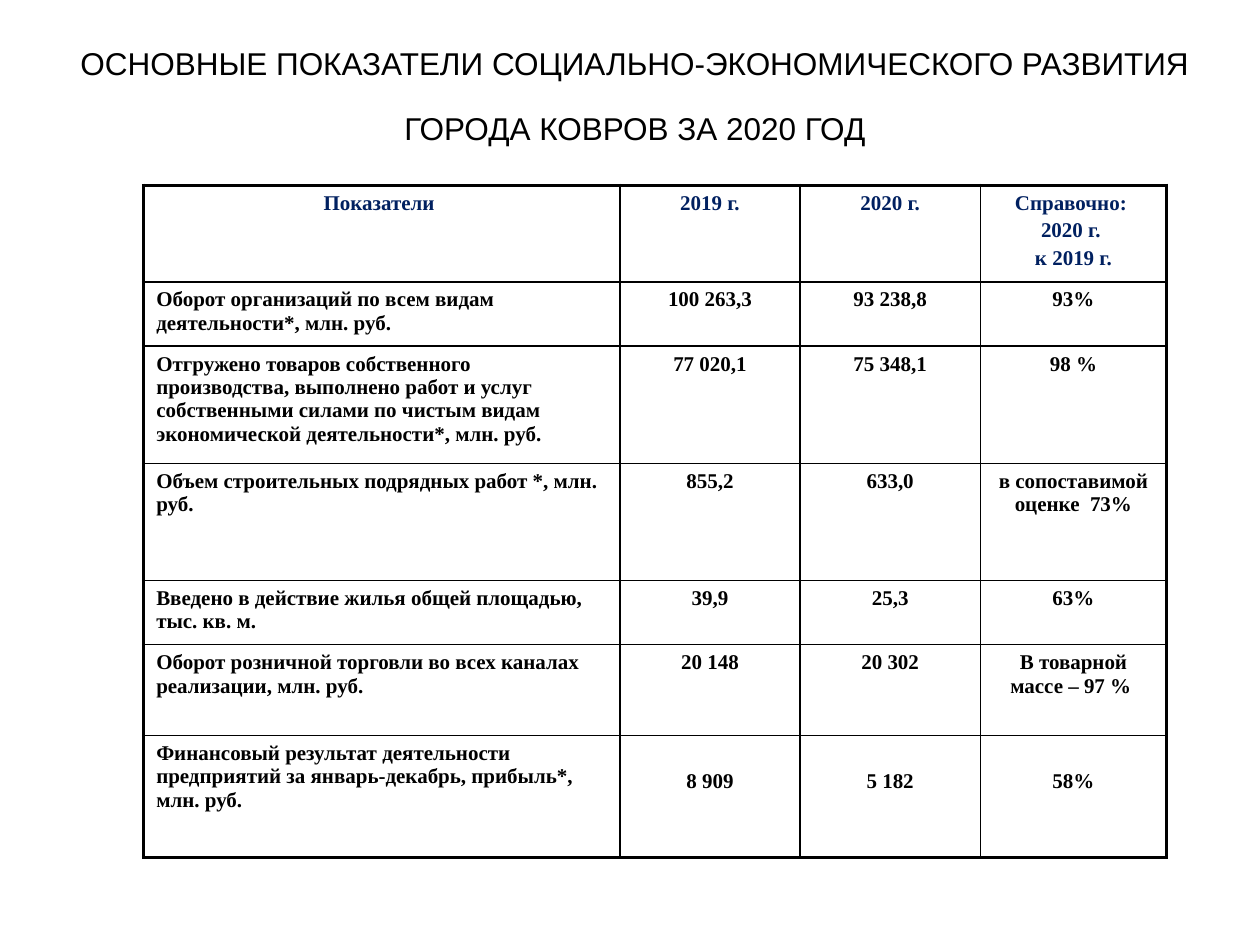
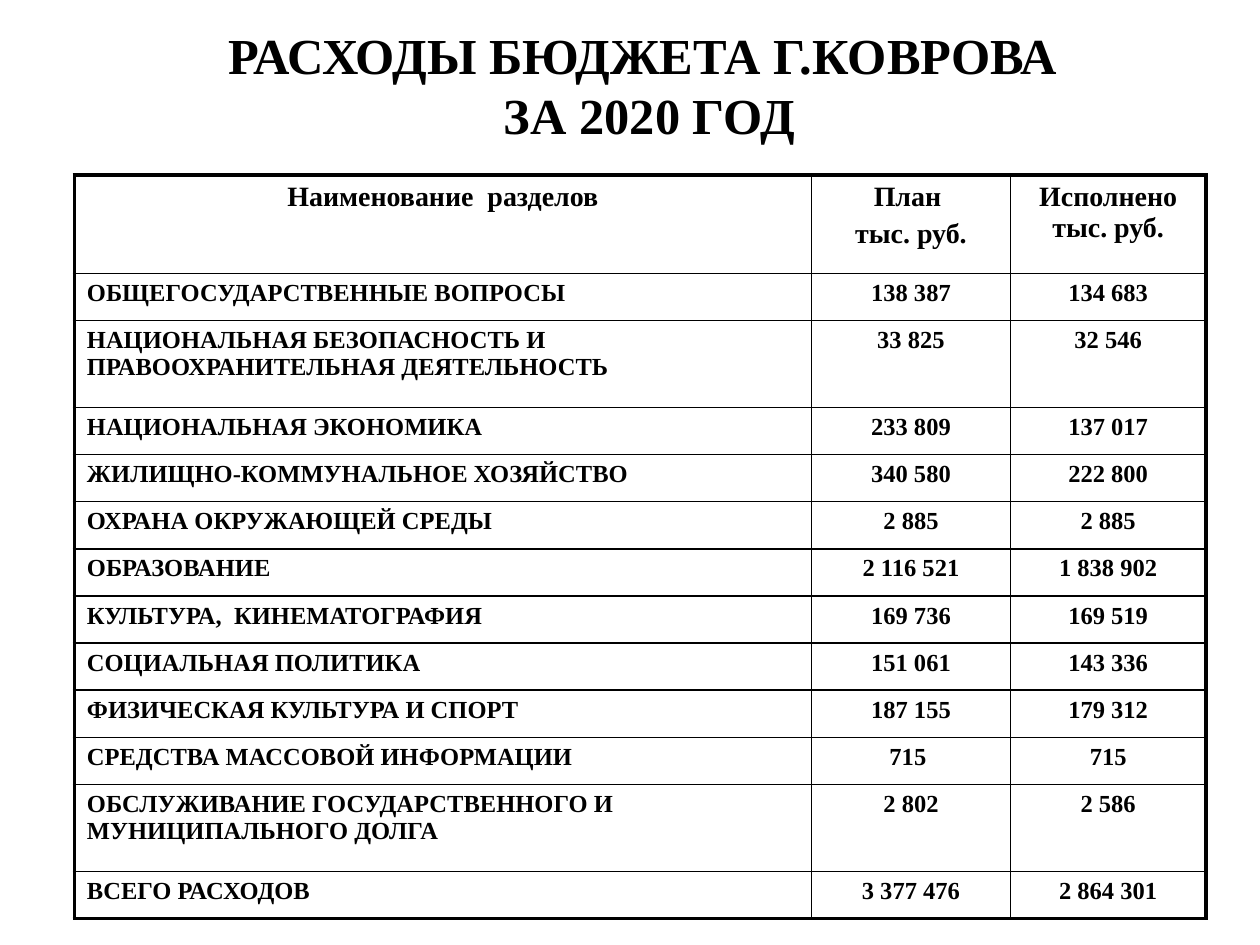
from lxml import etree
from pptx import Presentation
from pptx import util as u
from pptx.dml.color import RGBColor
from pptx.enum import text
from pptx.oxml import ns

BLACK = RGBColor(0x00, 0x00, 0x00)
NAVY = RGBColor(0x00, 0x20, 0x60)
SERIF = "Times New Roman"
SANS = "Arial"
WIDTH, HEIGHT = u.Inches(10), u.Inches(7.5)
FRAME, RULE = 2.25, 1

INDICATORS = [
    ["Показатели ", "2019 г.", "2020 г.", "Справочно: \n2020 г. \nк 2019 г."],
    ["Оборот организаций по всем видам деятельности*, млн. руб.",
     "100 263,3", "93 238,8", "93%"],
    ["Отгружено товаров собственного производства, выполнено работ и услуг "
     "собственными силами по чистым видам экономической деятельности*, млн. руб.",
     "77 020,1", "75 348,1", "98 %"],
    ["Объем строительных подрядных работ *, млн. руб.",
     "855,2", "633,0", "в сопоставимой оценке  73%"],
    ["Введено в действие жилья общей площадью, тыс. кв. м.",
     "39,9", "25,3", "63%"],
    ["Оборот розничной торговли во всех каналах реализации, млн. руб.",
     "20 148", "20 302", "В товарной массе – 97 % "],
    ["Финансовый результат деятельности предприятий за январь-декабрь, "
     "прибыль*, млн. руб.", "8 909", "5 182", "58%"],
]
EXPENSES = [
    ["Наименование  разделов", "План \nтыс. руб.", "Исполнено тыс. руб."],
    ["ОБЩЕГОСУДАРСТВЕННЫЕ ВОПРОСЫ", "138 387", "134 683"],
    ["НАЦИОНАЛЬНАЯ БЕЗОПАСНОСТЬ И ПРАВООХРАНИТЕЛЬНАЯ ДЕЯТЕЛЬНОСТЬ",
     "33 825", "32 546"],
    ["НАЦИОНАЛЬНАЯ ЭКОНОМИКА", "233 809", "137 017"],
    ["ЖИЛИЩНО-КОММУНАЛЬНОЕ ХОЗЯЙСТВО", "340 580", "222 800"],
    ["ОХРАНА ОКРУЖАЮЩЕЙ СРЕДЫ", "2 885", "2 885"],
    ["ОБРАЗОВАНИЕ", "2 116 521", "1 838 902"],
    ["КУЛЬТУРА,  КИНЕМАТОГРАФИЯ", "169 736", "169 519"],
    ["СОЦИАЛЬНАЯ ПОЛИТИКА", "151 061", "143 336"],
    ["ФИЗИЧЕСКАЯ КУЛЬТУРА И СПОРТ", "187 155", "179 312"],
    ["СРЕДСТВА МАССОВОЙ ИНФОРМАЦИИ", "715 ", "715"],
    ["ОБСЛУЖИВАНИЕ ГОСУДАРСТВЕННОГО И МУНИЦИПАЛЬНОГО ДОЛГА", "2 802", "2 586"],
    ["ВСЕГО РАСХОДОВ", "3 377 476", "2 864 301"],
]


def across(percent):
    """Turn a percentage of the slide's width into a length."""
    return round(WIDTH * percent / 100)


def down(percent):
    """Turn a percentage of the slide's height into a length."""
    return round(HEIGHT * percent / 100)


def write(frame, words, size, font, color=BLACK, bold=False, centred=True, gap=0):
    """Fill a text frame with one paragraph per line of words."""
    for index, line in enumerate(words.split("\n")):
        para = frame.add_paragraph() if index else frame.paragraphs[0]
        para.alignment = text.PP_ALIGN.CENTER if centred else text.PP_ALIGN.LEFT
        para.space_before = u.Pt(gap if index else 0)
        span = para.add_run()
        span.text = line
        span.font.size = u.Pt(size)
        span.font.name = font
        span.font.bold = bold
        span.font.color.rgb = color


def add_title(page, words, left, top, width, height, **style):
    """Add a centred title, placed in percentages of the slide."""
    box = page.shapes.add_textbox(across(left), down(top), across(width), down(height))
    frame = box.text_frame
    frame.word_wrap = True
    frame.vertical_anchor = text.MSO_ANCHOR.MIDDLE
    write(frame, words, **style)


def set_borders(cell, widths):
    """Draw the left, right, top and bottom borders of a cell in points."""
    properties = cell._tc.get_or_add_tcPr()
    for index, (side, width) in enumerate(zip("LRTB", widths)):
        line = etree.Element(ns.qn(f"a:ln{side}"), w=str(u.Pt(width)))
        fill = etree.SubElement(line, ns.qn("a:solidFill"))
        etree.SubElement(fill, ns.qn("a:srgbClr"), val=str(BLACK))
        properties.insert(index, line)


def add_grid(page, rows, left, top, widths, heights, head_size, size, head_color=BLACK):
    """Add a framed table with thin inner rules and return it."""
    last_row, last_column = len(rows) - 1, len(widths) - 1
    table = page.shapes.add_table(
        len(rows), len(widths), across(left), down(top),
        across(sum(widths)), down(sum(heights))).table
    table.first_row = table.horz_banding = False
    for column, width in zip(table.columns, widths):
        column.width = across(width)
    for r, (row, height) in enumerate(zip(rows, heights)):
        table.rows[r].height = down(height)
        for c, words in enumerate(row):
            cell = table.cell(r, c)
            cell.fill.background()
            outer = (c == 0, c == last_column, r == 0, r == last_row)
            set_borders(cell, [FRAME if edge else RULE for edge in outer])
            cell_size = size if r else head_size
            write(cell.text_frame, words, cell_size, SERIF,
                  color=BLACK if r else head_color, bold=True,
                  centred=r == 0 or c > 0, gap=cell_size * 0.2)
    return table


def add_indicators(page):
    """Build the slide of social and economic indicators."""
    add_title(page, "ОСНОВНЫЕ ПОКАЗАТЕЛИ СОЦИАЛЬНО-ЭКОНОМИЧЕСКОГО РАЗВИТИЯ \n"
              "ГОРОДА КОВРОВ ЗА 2020 ГОД ",
              5.1, 4, 91.3, 12.13, size=18, font=SANS, gap=15.5)
    table = add_grid(page, INDICATORS, 11.4, 19.6, [37.8, 14.3, 14.3, 14.8],
                     [9.87, 6.8, 12.4, 12.4, 6.8, 9.6, 12.9],
                     head_size=12, size=12, head_color=NAVY)
    for column in range(1, 4):
        table.cell(len(INDICATORS) - 1, column).margin_top = down(3.6)


def add_expenses(page):
    """Build the slide of budget expenses."""
    add_title(page, "РАСХОДЫ БЮДЖЕТА Г.КОВРОВА \nЗА 2020 ГОД",
              10.6, 1.6, 81.9, 14.67, size=28.8, font=SERIF, bold=True)
    single, double = 4.99, 9.2
    heights = [10.4] + [double if len(name) > 50 else single
                        for name, *_ in EXPENSES[1:]]
    add_grid(page, EXPENSES, 5.9, 18.53, [58.5, 15.8, 15.5], heights,
             head_size=16, size=14)


def main():
    """Build the deck and save it."""
    deck = Presentation()
    deck.slide_width, deck.slide_height = WIDTH, HEIGHT
    for build in (add_indicators, add_expenses):
        build(deck.slides.add_slide(deck.slide_layouts[6]))
    deck.save("out.pptx")


if __name__ == "__main__":
    main()
